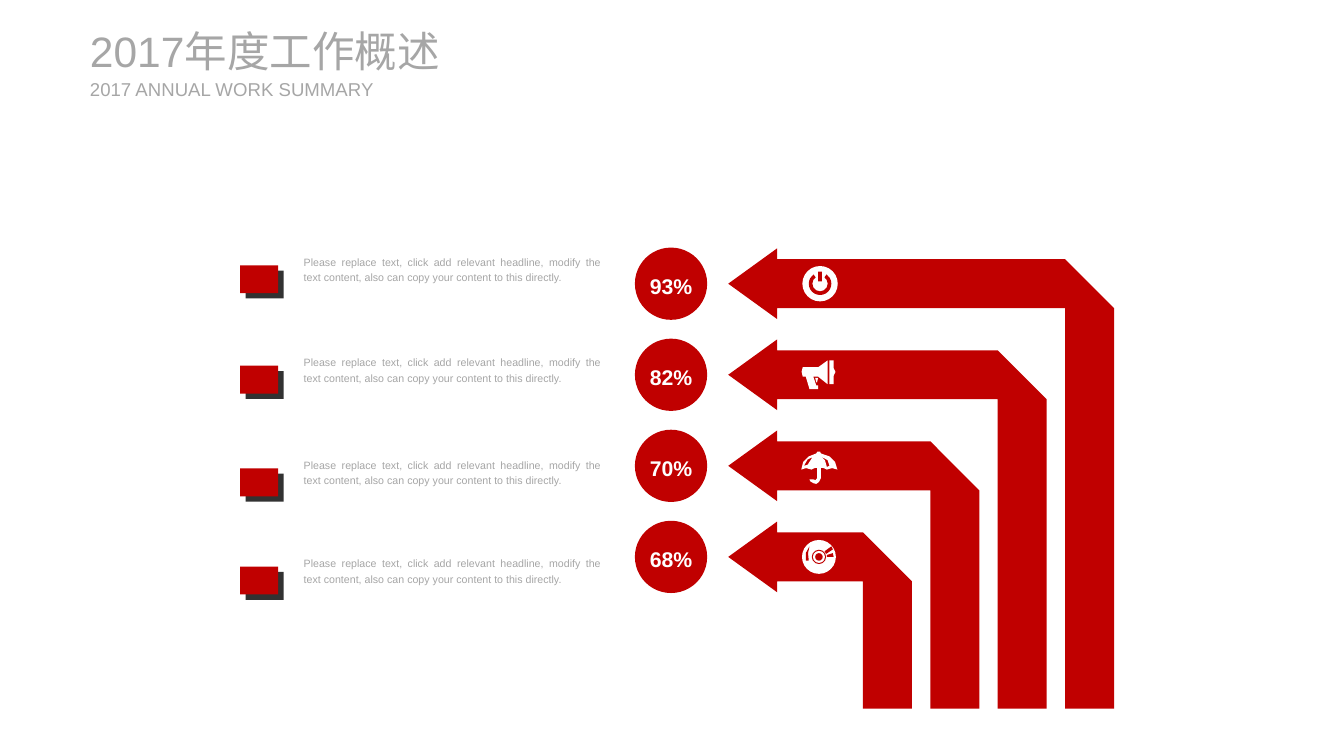
import pptx
import pptx.util
import pptx.dml.color
import pptx.enum.shapes
import pptx.enum.text

Cm = pptx.util.Cm
SHAPE = pptx.enum.shapes.MSO_SHAPE
ALIGN = pptx.enum.text.PP_ALIGN
ANCHOR = pptx.enum.text.MSO_ANCHOR

COLORS = {"red": "C00000", "dark": "323232", "grey": "A6A6A6", "white": "FFFFFF"}
FORMATS = {
    "title": {"size": pptx.util.Pt(32), "bold": False},
    "subtitle": {"size": pptx.util.Pt(14), "bold": False},
    "percent": {"size": pptx.util.Pt(16), "bold": True},
    "body": {"size": pptx.util.Pt(8), "bold": False},
}
BODY = ("Please replace text, click add relevant headline, modify the text content, "
        "also can copy your content to this directly.")
PERCENTS = ["93%", "82%", "70%", "68%"]
ITEM_TOPS = [6.6, 9.27, 12.0, 14.61]
ROW_PITCH = 2.42
SHAFT = 1.3

MEGAPHONE = [
    [(-.46, -.2), (-.05, -.2), (.2, -.38), (.2, .25), (-.05, .05), (-.18, .05),
     (-.1, .28), (-.05, .28), (-.05, .38), (-.28, .38), (-.38, .05), (-.46, .05),
     (-.49, -.08)],
    [(.25, -.38), (.36, -.38), (.36, -.18), (.41, -.08), (.36, .03), (.36, .25), (.25, .25)],
    [(-.05, .08), (-.13, .08), (-.1, .2), (-.08, .2)],
]
UMBRELLA = [
    [(-.5, .1), (-.45, -.1), (-.3, -.25), (-.1, -.33), (-.07, -.38), (0, -.38),
     (.02, -.33), (.25, -.25), (.4, -.1), (.46, .1), (.32, .06), (.18, .1), (.1, .06),
     (.02, .05), (.02, .33), (-.03, .43), (-.1, .48), (-.18, .46), (-.26, .41),
     (-.28, .36), (-.18, .36), (-.12, .38), (-.08, .33), (-.08, .05), (-.15, .06),
     (-.23, .1), (-.37, .06)],
    [(.18, .03), (.25, 0), (.2, -.15), (.02, -.25), (.13, -.15)],
    [(-.43, 0), (-.33, -.03), (-.2, -.23), (-.33, -.17)],
]
DISC_SHINE = [
    [(-.28, -.28), (-.38, -.1), (-.38, .1), (-.3, .1), (-.32, -.1)],
    [(.12, -.15), (.3, -.28), (.34, -.2), (.16, -.08)],
    [(.18, -.05), (.34, -.1), (.36, 0), (.18, 0)],
]


def paint(shape, color):
    """Give a shape a flat fill without line or shadow."""
    shape.shadow.inherit = False
    shape.fill.solid()
    shape.fill.fore_color.rgb = pptx.dml.color.RGBColor.from_string(COLORS[color])
    shape.line.fill.background()
    return shape


def add_preset(slide, preset, box, color):
    """Place a flat preset shape in a box given in centimetres."""
    return paint(slide.shapes.add_shape(preset, *map(Cm, box)), color)


def add_outline(slide, x, y, contours, color):
    """Draw closed contours given in centimetres from the point x, y."""
    placed = [[(Cm(x + dx), Cm(y + dy)) for dx, dy in contour] for contour in contours]
    builder = slide.shapes.build_freeform(*placed[0][0])
    for index, contour in enumerate(placed):
        if index:
            builder.move_to(*contour[0])
        builder.add_line_segments(contour[1:], close=True)
    return paint(builder.convert_to_shape(), color)


def add_disc(slide, x, y, radius, color):
    """Draw a circle around the point x, y."""
    return add_preset(slide, SHAPE.OVAL, (x - radius, y - radius, 2 * radius, 2 * radius), color)


def write(shape, text, style, color, align, insets=(0, 0), anchor=ANCHOR.MIDDLE, spacing=1.0):
    """Write one formatted paragraph into a shape."""
    frame = shape.text_frame
    side, edge = map(Cm, insets)
    settings = {"margin_left": side, "margin_right": side, "margin_top": edge,
                "margin_bottom": edge, "word_wrap": True, "vertical_anchor": anchor,
                "auto_size": pptx.enum.text.MSO_AUTO_SIZE.NONE}
    for key, value in settings.items():
        setattr(frame, key, value)
    paragraph = frame.paragraphs[0]
    paragraph.alignment = align
    paragraph.line_spacing = spacing
    run = paragraph.add_run()
    run.text = text
    for key, value in {"name": "Arial", **FORMATS[style]}.items():
        setattr(run.font, key, value)
    run.font.color.rgb = pptx.dml.color.RGBColor.from_string(COLORS[color])


def add_heading(slide, left, top, width):
    """Place the title and the subtitle below it."""
    title = slide.shapes.title
    for key, value in zip(("left", "top", "width", "height"), (left, top, width, 1.37)):
        setattr(title, key, Cm(value))
    write(title, "2017年度工作概述", "title", "grey", ALIGN.LEFT)
    subtitle = slide.shapes.add_textbox(Cm(left), Cm(top + 1.4), Cm(width), Cm(0.61))
    write(subtitle, "2017 ANNUAL WORK SUMMARY", "subtitle", "grey", ALIGN.LEFT)


def add_item(slide, left, top, width):
    """Place a double square marker with its description."""
    add_preset(slide, SHAPE.RECTANGLE, (left + 0.15, top + 0.59, 1.01, 0.74), "dark")
    add_preset(slide, SHAPE.RECTANGLE, (left, top + 0.45, 1.01, 0.74), "red")
    body = slide.shapes.add_textbox(Cm(left + 1.44), Cm(top), Cm(width - 1.44), Cm(1.04))
    write(body, BODY, "body", "grey", ALIGN.JUSTIFY, (0.25, 0.13), ANCHOR.TOP, 1.2)


def add_arrow(slide, left, middle, right, bottom):
    """Draw a bent arrow that rises from the bottom and points left."""
    half, head = SHAFT / 2, 0.94
    width, drop = right - left, bottom - middle
    add_outline(slide, left, middle, [[
        (0, 0), (SHAFT, -head), (SHAFT, -half), (width - SHAFT, -half), (width, half),
        (width, drop), (width - SHAFT, drop), (width - SHAFT, half), (SHAFT, half),
        (SHAFT, head)]], "red")


def add_power(slide, x, y):
    """Draw the power button icon."""
    add_disc(slide, x, y, 0.47, "white")
    ring = add_preset(slide, SHAPE.BLOCK_ARC, (x - 0.3, y - 0.3, 0.6, 0.6), "red")
    for index, value in enumerate((305 * 0.6, 235 * 0.6, 0.16)):
        ring.adjustments[index] = value
    add_preset(slide, SHAPE.RECTANGLE, (x - 0.05, y - 0.32, 0.1, 0.26), "red")


def add_megaphone(slide, x, y):
    """Draw the megaphone icon."""
    add_outline(slide, x, y, MEGAPHONE, "white")


def add_umbrella(slide, x, y):
    """Draw the umbrella icon."""
    add_outline(slide, x, y, UMBRELLA, "white")


def add_record(slide, x, y):
    """Draw the record icon."""
    hub = x - 0.03
    add_disc(slide, hub, y, 0.45, "white")
    for radius, color in ((0.19, "red"), (0.16, "white"), (0.1, "red")):
        add_disc(slide, hub, y, radius, color)
    add_outline(slide, x, y, DISC_SHINE, "red")


def add_arrows(slide, left, top, right, bottom):
    """Place the percent circles with their nested arrows and icons."""
    icons = [add_power, add_megaphone, add_umbrella, add_record]
    for row, (percent, add_icon) in enumerate(zip(PERCENTS, icons)):
        middle = top + 0.96 + row * ROW_PITCH
        circle = add_disc(slide, left + 0.96, middle, 0.96, "red")
        write(circle, percent, "percent", "white", ALIGN.CENTER, spacing=1.2)
        add_arrow(slide, left + 2.48, middle, right - row * 1.79, bottom)
        add_icon(slide, left + 4.92, middle)


def main():
    """Build and save the slide."""
    deck = pptx.Presentation()
    deck.slide_width, deck.slide_height = Cm(35.71), Cm(20.09)
    slide = deck.slides.add_slide(deck.slide_layouts[5])
    add_heading(slide, 2.39, 0.66, 10.97)
    for top in ITEM_TOPS:
        add_item(slide, 6.38, top, 9.85)
    add_arrows(slide, 16.87, 6.58, 29.6, 18.83)
    deck.save("out.pptx")


if __name__ == "__main__":
    main()
